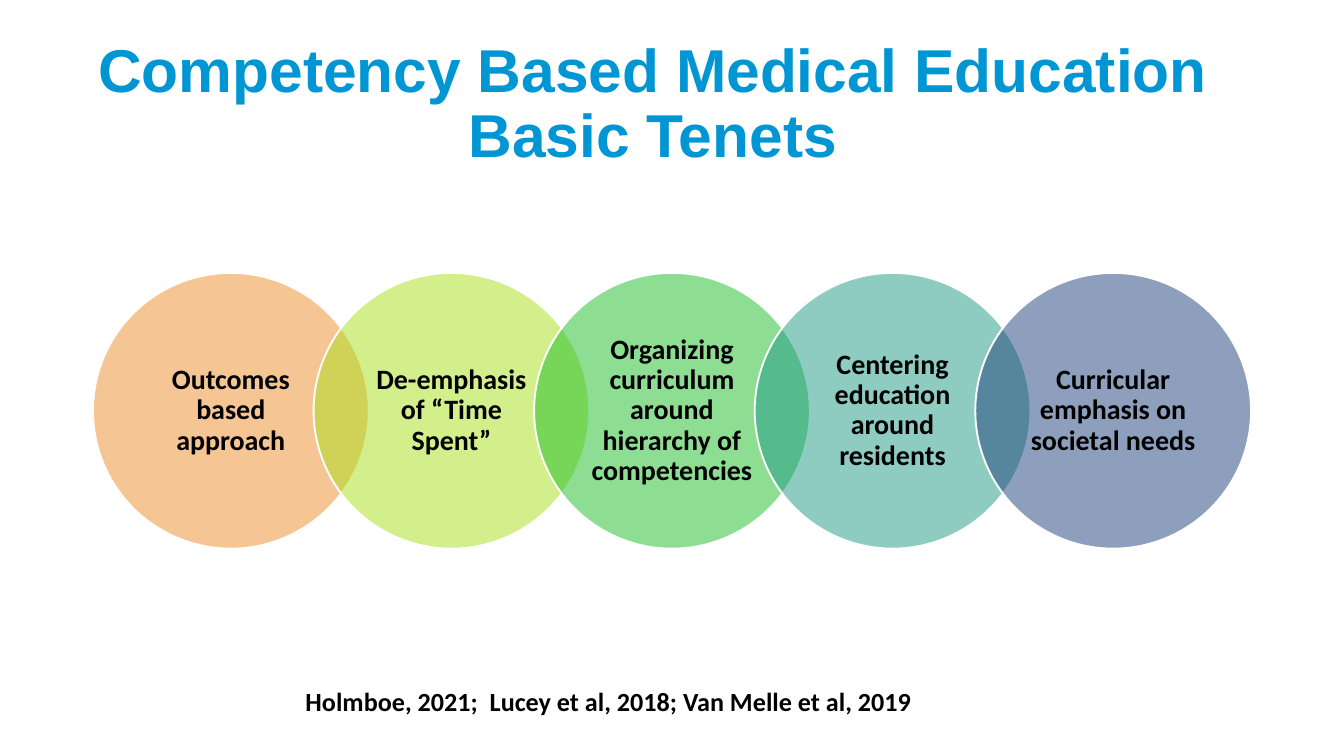
from dataclasses import dataclass

from lxml import etree
from pptx import Presentation
from pptx.dml.color import RGBColor
from pptx.enum import shapes, text
from pptx.oxml import ns
from pptx.util import Pt


@dataclass(frozen=True)
class Theme:
    """Colours, fonts and type sizes of the slide."""
    heading: str = "0096D3"
    ink: str = "000000"
    outline: str = "FFFFFF"
    heading_font: str = "Arial"
    body_font: str = "Calibri"
    heading_size: float = 32.4
    tenet_size: float = 15
    citation_size: float = 14


THEME = Theme()
TENETS = [
    ("Outcomes based approach", "EF8D2B"),
    ("De-emphasis of “Time Spent”", "A9E019"),
    ("Organizing curriculum around hierarchy of competencies", "1CBD26"),
    ("Centering education around residents", "1E9B87"),
    ("Curricular emphasis on societal needs", "1D417B"),
]


def write(frame, wording, font_name, size, color, spacing=1.0):
    """Fill a text frame with one bold, centred paragraph."""
    frame.text = wording
    paragraph = frame.paragraphs[0]
    paragraph.alignment = text.PP_ALIGN.CENTER
    paragraph.line_spacing = spacing
    paragraph.font.name = font_name
    paragraph.font.size = Pt(size)
    paragraph.font.bold = True
    paragraph.font.color.rgb = RGBColor.from_string(color)


def set_opacity(shape, percent):
    """Make the solid fill of a shape see-through."""
    color = shape.fill._xPr.find(ns.qn("a:solidFill"))[0]
    etree.SubElement(color, ns.qn("a:alpha"), val=str(percent * 1000))


def place_heading(slide, left, top, width, height):
    """Move and format the title placeholder."""
    heading = slide.shapes.title
    heading.left, heading.top = Pt(left), Pt(top)
    heading.width, heading.height = Pt(width), Pt(height)
    frame = heading.text_frame
    frame.vertical_anchor = text.MSO_ANCHOR.MIDDLE
    frame.auto_size = text.MSO_AUTO_SIZE.NONE
    write(frame, "Competency Based Medical Education\vBasic Tenets",
          THEME.heading_font, THEME.heading_size, THEME.heading, 0.9)


def place_tenets(slide, left, top, width, overlap=0.2):
    """Draw a row of overlapping circles across the given width."""
    step = 1 - overlap
    diameter = width / (1 + step * (len(TENETS) - 1))
    row = slide.shapes.add_group_shape()
    for index, (wording, color) in enumerate(TENETS):
        tenet = row.shapes.add_shape(
            shapes.MSO_SHAPE.OVAL, Pt(left + index * step * diameter), Pt(top),
            Pt(diameter), Pt(diameter))
        tenet.shadow.inherit = False
        tenet.fill.solid()
        tenet.fill.fore_color.rgb = RGBColor.from_string(color)
        set_opacity(tenet, 50)
        tenet.line.color.rgb = RGBColor.from_string(THEME.outline)
        tenet.line.width = Pt(1)
        frame = tenet.text_frame
        frame.word_wrap = True
        frame.vertical_anchor = text.MSO_ANCHOR.MIDDLE
        frame.margin_left = frame.margin_right = Pt(8)
        frame.margin_top = frame.margin_bottom = Pt(1.5)
        write(frame, wording, THEME.body_font, THEME.tenet_size, THEME.ink, 0.9)


def place_citation(slide, left, top, width, height):
    """Add the line of references below the circles."""
    citation = slide.shapes.add_textbox(Pt(left), Pt(top), Pt(width), Pt(height))
    frame = citation.text_frame
    frame.word_wrap = False
    frame.auto_size = text.MSO_AUTO_SIZE.SHAPE_TO_FIT_TEXT
    write(frame, "Holmboe, 2021;  Lucey et al, 2018; Van Melle et al, 2019",
          THEME.body_font, THEME.citation_size, THEME.ink)


def main():
    """Build the slide and save it."""
    deck = Presentation()
    deck.slide_width, deck.slide_height = Pt(720), Pt(405)
    slide = deck.slides.add_slide(deck.slide_layouts[5])
    place_heading(slide, 39.5, 17.3, 620.5, 78.5)
    place_tenets(slide, 49.8, 146.2, 620.4)
    place_citation(slide, 155.5, 363.6, 341.3, 24.5)
    deck.save("out.pptx")


if __name__ == "__main__":
    main()
